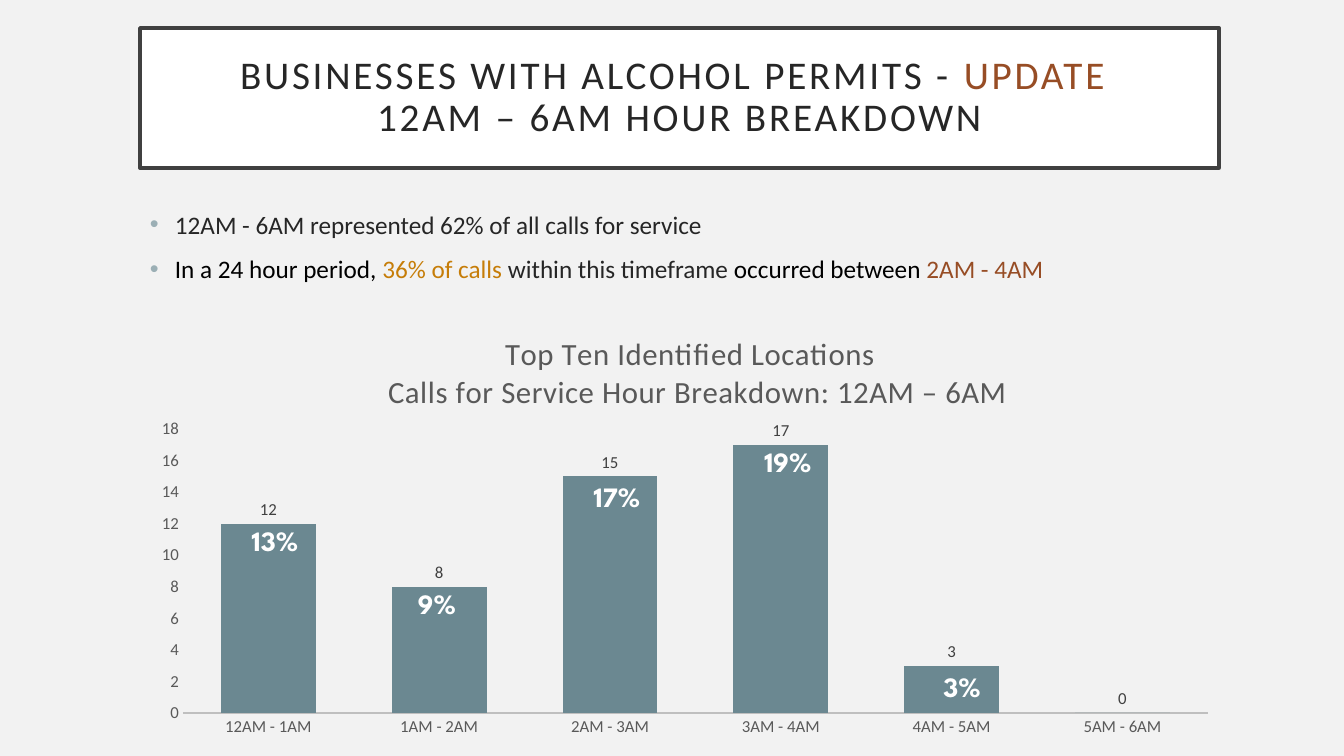
from lxml.etree import SubElement
from pptx import Presentation
from pptx.chart.data import CategoryChartData
from pptx.dml.color import RGBColor
from pptx.enum.chart import XL_CHART_TYPE, XL_LABEL_POSITION, XL_TICK_MARK
from pptx.enum.shapes import MSO_SHAPE
from pptx.enum.text import MSO_ANCHOR, PP_ALIGN
from pptx.oxml import parse_xml
from pptx.oxml.ns import nsdecls, qn
from pptx.util import Emu, Pt

EMU_PER_PX = 914400 / 100.8

PAPER = RGBColor(0xF2, 0xF2, 0xF2)
WHITE = RGBColor(0xFF, 0xFF, 0xFF)
BLACK = RGBColor(0x00, 0x00, 0x00)
INK = RGBColor(0x26, 0x26, 0x26)
FRAME = RGBColor(0x40, 0x40, 0x40)
AXIS_TEXT = RGBColor(0x59, 0x59, 0x59)
AXIS_LINE = RGBColor(0xBF, 0xBF, 0xBF)
RUST = RGBColor(0x97, 0x4D, 0x25)
AMBER = RGBColor(0xC6, 0x7D, 0x08)
TEAL = RGBColor(0x6B, 0x88, 0x91)
BULLET = RGBColor(0x9B, 0xAF, 0xB5)

HEADING = [
    [("BUSINESSES WITH ALCOHOL PERMITS - ", INK), ("UPDATE ", RUST)],
    [("12AM – 6AM HOUR BREAKDOWN", INK)],
]
FINDINGS = [
    [("12AM - 6AM represented 62% of all calls for service", INK)],
    [("In a 24 hour period, ", BLACK), ("36% of calls ", AMBER),
     ("within this timeframe", INK), (" occurred between ", BLACK),
     ("2AM - 4AM", RUST)],
]
CHART_TITLE = ["Top Ten Identified Locations  ",
               "Calls for Service Hour Breakdown: 12AM – 6AM"]
CALLS = {"12AM - 1AM": 12, "1AM - 2AM": 8, "2AM - 3AM": 15,
         "3AM - 4AM": 17, "4AM - 5AM": 3, "5AM - 6AM": 0}
SHARES = [("13%", 199, 513), ("9%", 361, 576), ("17%", 541, 469),
          ("19%", 712, 434), ("3%", 886, 659)]


def px(*lengths):
    return [Emu(round(length * EMU_PER_PX)) for length in lengths]


def set_format(target, values):
    for name, value in values.items():
        setattr(target, name, value)


def style_font(font, size, color, name="Calibri", bold=False):
    set_format(font, {"size": Pt(size), "name": name, "bold": bold})
    font.color.rgb = color


def add_span(para, text, size, color, spacing=0, **style):
    span = para.add_run()
    span.text = text
    style_font(span.font, size, color, **style)
    if spacing:
        span.font._element.set("spc", str(spacing))


def add_text_box(slide, *bounds):
    frame = slide.shapes.add_textbox(*px(*bounds)).text_frame
    frame.word_wrap = True
    return frame


def add_heading(slide):
    box = slide.shapes.add_shape(MSO_SHAPE.RECTANGLE, *px(140, 28, 1079, 140))
    box.shadow.inherit = False
    box.fill.solid()
    box.fill.fore_color.rgb = WHITE
    box.line.color.rgb = FRAME
    box.line.width = Pt(2.5)
    inset, = px(20)
    set_format(box.text_frame, {
        "word_wrap": True, "vertical_anchor": MSO_ANCHOR.MIDDLE,
        "margin_left": inset, "margin_right": inset,
        "margin_top": inset, "margin_bottom": inset})
    para = box.text_frame.paragraphs[0]
    set_format(para, {"alignment": PP_ALIGN.CENTER, "line_spacing": 0.9})
    for index, line in enumerate(HEADING):
        if index:
            para.add_line_break()
        for text, color in line:
            add_span(para, text, 28, color, spacing=200)


def add_bullet(para):
    properties = para._p.get_or_add_pPr()
    indent, = px(25)
    properties.set("marL", str(indent))
    properties.set("indent", str(-indent))
    color = SubElement(properties, qn("a:buClr"))
    SubElement(color, qn("a:srgbClr")).set("val", str(BULLET))
    SubElement(properties, qn("a:buFont")).set("typeface", "Arial")
    SubElement(properties, qn("a:buChar")).set("char", "•")


def add_findings(slide):
    frame = add_text_box(slide, 140, 204, 1091, 100)
    for index, finding in enumerate(FINDINGS):
        para = frame.add_paragraph() if index else frame.paragraphs[0]
        para.space_before = Pt(10)
        add_bullet(para)
        for text, color in finding:
            add_span(para, text, 18, color)


def place(parent, before, **fractions):
    """Give a chart part a manual layout, put ahead of the named sibling."""
    for old in parent.findall(qn("c:layout")):
        parent.remove(old)
    target = "<c:layoutTarget val='inner'/>" if "w" in fractions else ""
    modes = "".join(f"<c:{key}Mode val='edge'/>" for key in "xy")
    values = "".join(f"<c:{key} val='{value:.4f}'/>"
                     for key, value in fractions.items())
    layout = parse_xml(f"<c:layout {nsdecls('c')}><c:manualLayout>{target}"
                       f"{modes}{values}</c:manualLayout></c:layout>")
    parent.find(qn(before)).addprevious(layout)


def style_axes(chart):
    for axis in (chart.category_axis, chart.value_axis):
        set_format(axis, {"major_tick_mark": XL_TICK_MARK.NONE,
                          "minor_tick_mark": XL_TICK_MARK.NONE})
        style_font(axis.tick_labels.font, 12, AXIS_TEXT)
    line = chart.category_axis.format.line
    line.color.rgb = AXIS_LINE
    line.width = Pt(1.25)
    values = chart.value_axis
    set_format(values, {"minimum_scale": 0, "maximum_scale": 18,
                        "major_unit": 2})
    values.format.line.fill.background()
    grid = values.major_gridlines.format.line
    grid.color.rgb = PAPER
    grid.width = Pt(0.75)


def add_chart_title(chart):
    frame = chart.chart_title.text_frame
    for index, line in enumerate(CHART_TITLE):
        para = frame.add_paragraph() if index else frame.paragraphs[0]
        para.alignment = PP_ALIGN.CENTER
        add_span(para, line, 22, AXIS_TEXT, spacing=50)
    chart.chart_title.include_in_layout = False
    place(chart.chart_title._element, "c:overlay", x=245 / 1091, y=19 / 434)


def add_calls_chart(slide):
    data = CategoryChartData()
    data.categories = list(CALLS)
    data.add_series("Series 1", list(CALLS.values()))
    chart = slide.shapes.add_chart(XL_CHART_TYPE.COLUMN_CLUSTERED,
                                   *px(140, 312, 1091, 434), data).chart
    chart.has_legend = False
    style_font(chart.font, 10, BLACK)
    add_chart_title(chart)
    style_axes(chart)
    plot = chart.plots[0]
    set_format(plot, {"gap_width": 80, "overlap": 25,
                      "vary_by_categories": False, "has_data_labels": True})
    set_format(plot.data_labels, {"show_value": True,
                                  "position": XL_LABEL_POSITION.OUTSIDE_END})
    style_font(plot.data_labels.font, 12, FRAME)
    fill = plot.series[0].format.fill
    fill.solid()
    fill.fore_color.rgb = TEAL
    place(chart._chartSpace.chart.plotArea, "c:barChart",
          x=43 / 1091, y=117 / 434, w=1025 / 1091, h=284 / 434)


def add_share(slide, text, left, top):
    para = add_text_box(slide, left, top, 152, 69).paragraphs[0]
    set_format(para, {"alignment": PP_ALIGN.CENTER, "line_spacing": 1.15})
    add_span(para, text, 20, WHITE, name="League Spartan", bold=True)


def main():
    deck = Presentation()
    deck.slide_width, deck.slide_height = px(1344, 756)
    slide = deck.slides.add_slide(deck.slide_layouts[6])
    slide.background.fill.solid()
    slide.background.fill.fore_color.rgb = PAPER
    add_heading(slide)
    add_findings(slide)
    add_calls_chart(slide)
    for share in SHARES:
        add_share(slide, *share)
    deck.save("out.pptx")


if __name__ == "__main__":
    main()
